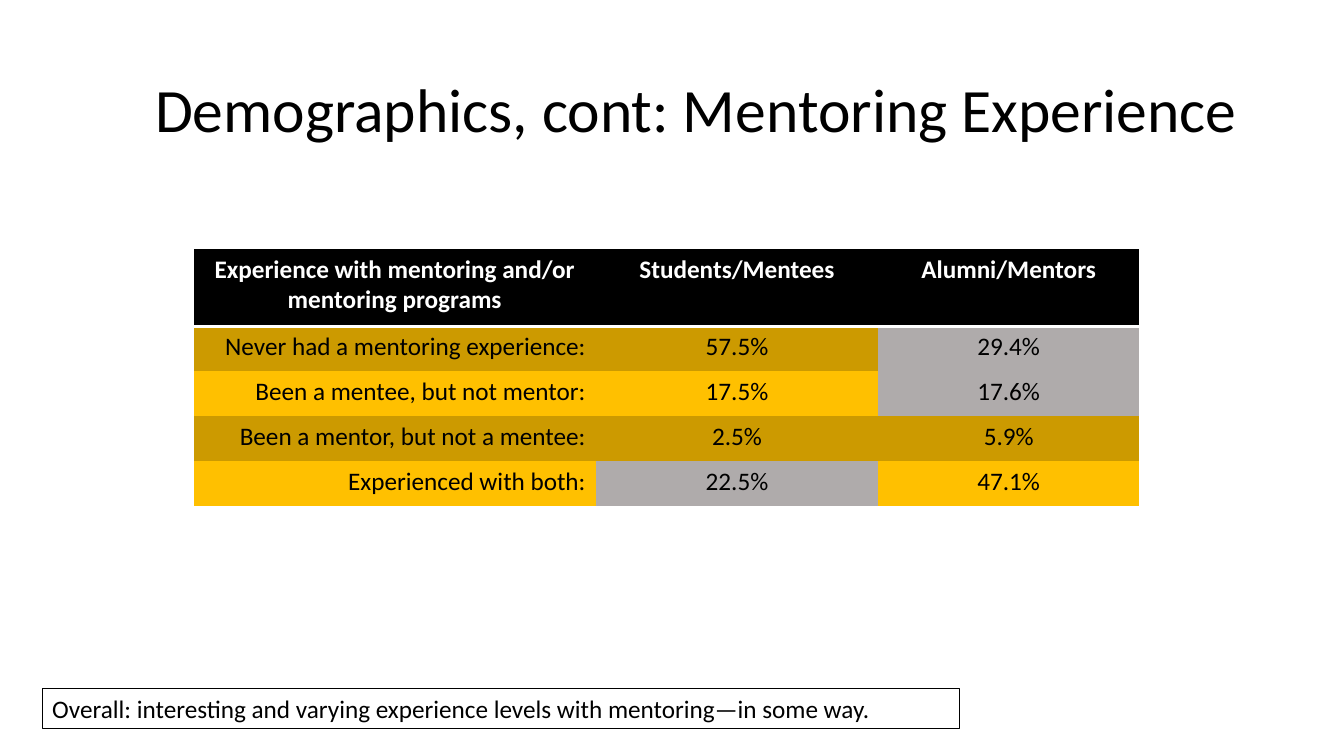
from dataclasses import dataclass

from lxml.etree import SubElement
from pptx import Presentation
from pptx.dml.color import RGBColor
from pptx.enum.shapes import MSO_SHAPE
from pptx.enum.text import MSO_ANCHOR, PP_ALIGN
from pptx.oxml.ns import qn
from pptx.slide import Slide
from pptx.table import _Cell
from pptx.text.text import TextFrame
from pptx.util import Inches, Pt

COLORS = {
    "black": "000000",
    "white": "FFFFFF",
    "dark gold": "CC9A00",
    "gold": "FFC000",
    "gray": "AFABAB",
}
FONT = "Calibri"
COLUMN_WIDTHS = (3.99, 2.8, 2.59)
HEADER_HEIGHT = 0.77
BODY_HEIGHT = 0.445
RULE_WIDTH = Pt(2)


@dataclass(frozen=True)
class ExperienceRow:
    texts: tuple[str, str, str]
    fill: str
    gray_column: int | None = None


HEADER = ExperienceRow(
    ("Experience with mentoring and/or mentoring programs", "Students/Mentees", "Alumni/Mentors"),
    "black",
)
BODY = (
    ExperienceRow(("Never had a mentoring experience:", "57.5%", "29.4%"), "dark gold", 2),
    ExperienceRow(("Been a mentee, but not mentor:", "17.5%", "17.6%"), "gold", 2),
    ExperienceRow(("Been a mentor, but not a mentee:", "2.5%", "5.9%"), "dark gold"),
    ExperienceRow(("Experienced with both:", "22.5%", "47.1%"), "gold", 1),
)


def color(name: str) -> RGBColor:
    return RGBColor.from_string(COLORS[name])


def write(
    frame: TextFrame,
    text: str,
    size: float = 18,
    color_name: str = "black",
    bold: bool = False,
    align: PP_ALIGN = PP_ALIGN.LEFT,
    line_spacing: float = 1.0,
) -> None:
    frame.word_wrap = True
    paragraph = frame.paragraphs[0]
    paragraph.alignment = align
    paragraph.line_spacing = line_spacing
    run = paragraph.add_run()
    run.text = text
    run.font.name = FONT
    run.font.size = Pt(size)
    run.font.bold = bold
    run.font.color.rgb = color(color_name)


def set_borders(cell: _Cell, white_side: str | None) -> None:
    """Clear every cell border except an optional white one."""
    properties = cell._tc.get_or_add_tcPr()
    for side in ("lnL", "lnR", "lnT", "lnB"):
        line = SubElement(properties, qn(f"a:{side}"))
        if side == white_side:
            line.set("w", str(RULE_WIDTH))
            fill = SubElement(line, qn("a:solidFill"))
            SubElement(fill, qn("a:srgbClr")).set("val", COLORS["white"])
        else:
            line.set("w", "0")
            SubElement(line, qn("a:noFill"))


def add_title(slide: Slide) -> None:
    title = slide.shapes.add_textbox(Inches(1.44), Inches(0.39), Inches(11.5), Inches(1.45))
    title.text_frame.vertical_anchor = MSO_ANCHOR.MIDDLE
    write(title.text_frame, "Demographics, cont: Mentoring Experience", 44, line_spacing=0.9)


def add_experience_table(slide: Slide) -> None:
    rows = (HEADER, *BODY)
    table = slide.shapes.add_table(
        len(rows), len(COLUMN_WIDTHS), Inches(1.92), Inches(2.47),
        Inches(sum(COLUMN_WIDTHS)), Inches(HEADER_HEIGHT + BODY_HEIGHT * len(BODY)),
    ).table
    table.horz_banding = False
    for column, width in zip(table.columns, COLUMN_WIDTHS):
        column.width = Inches(width)
    for row_index, row in enumerate(rows):
        is_header = row is HEADER
        table.rows[row_index].height = Inches(HEADER_HEIGHT if is_header else BODY_HEIGHT)
        white_side = {0: "lnB", 1: "lnT"}.get(row_index)
        for column_index, text in enumerate(row.texts):
            cell = table.cell(row_index, column_index)
            set_borders(cell, white_side)
            cell.fill.solid()
            cell.fill.fore_color.rgb = color("gray" if column_index == row.gray_column else row.fill)
            is_label = column_index == 0 and not is_header
            write(
                cell.text_frame,
                text,
                color_name="white" if is_header else "black",
                bold=is_header,
                align=PP_ALIGN.RIGHT if is_label else PP_ALIGN.CENTER,
            )


def add_summary(slide: Slide) -> None:
    summary = slide.shapes.add_shape(
        MSO_SHAPE.RECTANGLE, Inches(0.42), Inches(6.83), Inches(9.1), Inches(0.4)
    )
    summary.shadow.inherit = False
    summary.fill.solid()
    summary.fill.fore_color.rgb = color("white")
    summary.line.color.rgb = color("black")
    summary.line.width = Pt(1)
    summary.text_frame.vertical_anchor = MSO_ANCHOR.TOP
    write(
        summary.text_frame,
        "Overall: interesting and varying experience levels with mentoring—in some way.",
    )


def main() -> None:
    presentation = Presentation()
    presentation.slide_width = Inches(13.33)
    presentation.slide_height = Inches(7.5)
    slide = presentation.slides.add_slide(presentation.slide_layouts[6])
    add_title(slide)
    add_experience_table(slide)
    add_summary(slide)
    presentation.save("out.pptx")


if __name__ == "__main__":
    main()
